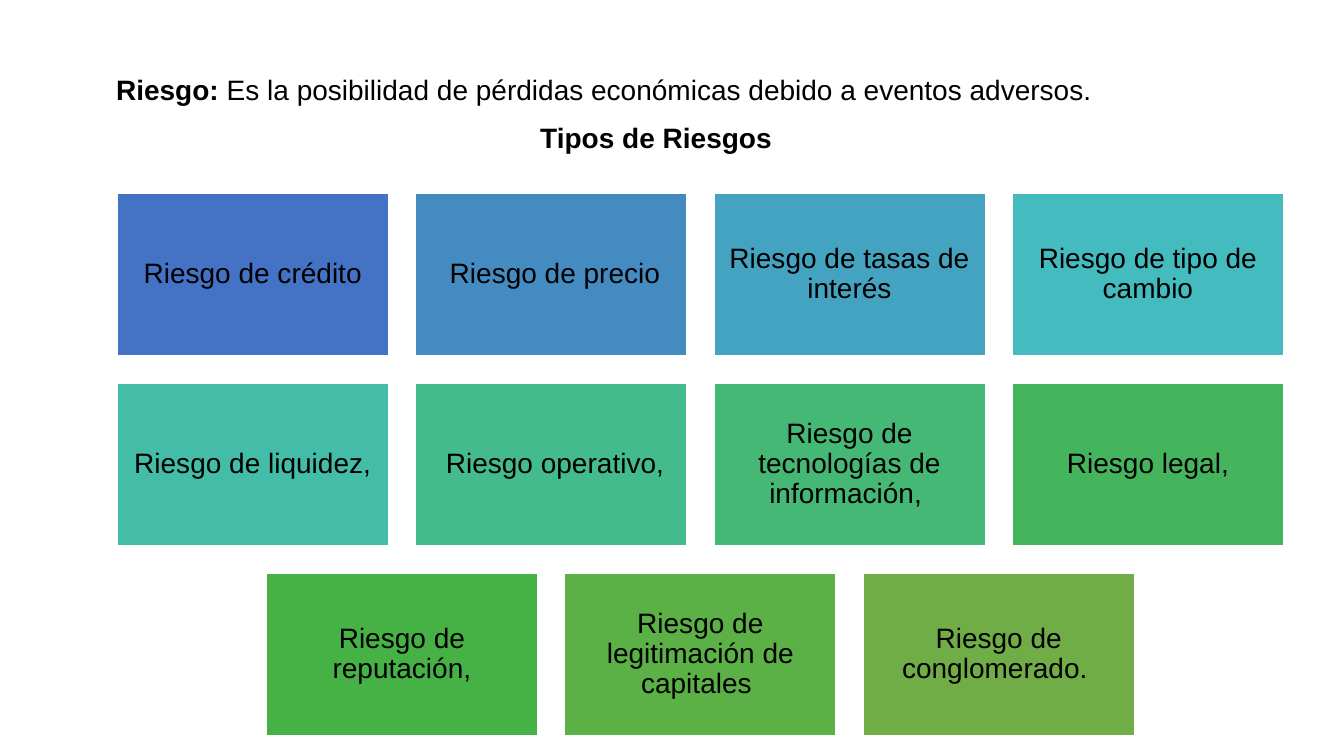
import dataclasses

import pptx
import pptx.dml.color
import pptx.enum.shapes
import pptx.enum.text
import pptx.oxml.ns
import pptx.slide
import pptx.text.text
import pptx.util
import lxml.etree

Cm = pptx.util.Cm
Pt = pptx.util.Pt
Align = pptx.enum.text.PP_ALIGN
Anchor = pptx.enum.text.MSO_ANCHOR


@dataclasses.dataclass(frozen=True)
class Theme:
    font: str = "Arial"
    size: float = 20
    text: str = "000000"
    outline: str = "FFFFFF"
    outline_width: float = 1


@dataclasses.dataclass(frozen=True)
class RiskTile:
    label: str
    fill: str


@dataclasses.dataclass(frozen=True)
class Box:
    left: float
    top: float
    width: float
    height: float


THEME = Theme()
COLUMNS = 4
FIRST_TILE = Box(2.95, 4.88, 6.84, 4.09)
COLUMN_STEP = 7.52
ROW_STEP = 4.78
TILE_INSET = 0.2

RISKS = [
    RiskTile("Riesgo de crédito", "4472C4"),
    RiskTile(" Riesgo de precio", "448BC2"),
    RiskTile("Riesgo de tasas de interés", "44A3C0"),
    RiskTile("Riesgo de tipo de cambio", "43BBBF"),
    RiskTile("Riesgo de liquidez,", "43BDA7"),
    RiskTile(" Riesgo operativo,", "43BB8D"),
    RiskTile("Riesgo de tecnologías de información, ", "44B874"),
    RiskTile("Riesgo legal,", "45B55D"),
    RiskTile("Riesgo de reputación,", "46B246"),
    RiskTile("Riesgo de legitimación de capitales ", "5BB046"),
    RiskTile("Riesgo de conglomerado. ", "70AD47"),
]


def color(value: str) -> pptx.dml.color.RGBColor:
    return pptx.dml.color.RGBColor.from_string(value)


def format_run(run: pptx.text.text._Run, bold: bool = False) -> None:
    run.font.name = THEME.font
    run.font.size = Pt(THEME.size)
    run.font.bold = bold
    run.font.color.rgb = color(THEME.text)


def place_placeholder(shape, box: Box) -> None:
    shape.left, shape.top = Cm(box.left), Cm(box.top)
    shape.width, shape.height = Cm(box.width), Cm(box.height)
    frame = shape.text_frame
    frame.word_wrap = True
    frame.auto_size = pptx.enum.text.MSO_AUTO_SIZE.NONE
    frame.vertical_anchor = Anchor.TOP


def add_title(slide: pptx.slide.Slide) -> None:
    title = slide.shapes.title
    place_placeholder(title, Box(13.36, 2.9, 7.01, 1.12))
    title.text_frame.text = "Tipos de Riesgos"
    paragraph = title.text_frame.paragraphs[0]
    paragraph.alignment = Align.LEFT
    format_run(paragraph.runs[0], bold=True)


def add_definition(slide: pptx.slide.Slide) -> None:
    body = slide.placeholders[1]
    place_placeholder(body, Box(2.67, 1.7, 27.64, 1.12))
    paragraph = body.text_frame.paragraphs[0]
    paragraph.alignment = Align.JUSTIFY
    paragraph.space_before = Pt(0)
    properties = paragraph._p.get_or_add_pPr()
    properties.set("marL", "0")
    properties.set("indent", "0")
    lxml.etree.SubElement(properties, pptx.oxml.ns.qn("a:buNone"))
    parts = [
        ("Riesgo: ", True),
        ("Es la posibilidad de pérdidas económicas debido a eventos adversos. ", False),
    ]
    for text, bold in parts:
        run = paragraph.add_run()
        run.text = text
        format_run(run, bold)


def add_tile(slide: pptx.slide.Slide, tile: RiskTile, box: Box) -> None:
    shape = slide.shapes.add_shape(
        pptx.enum.shapes.MSO_SHAPE.RECTANGLE,
        Cm(box.left), Cm(box.top), Cm(box.width), Cm(box.height),
    )
    shape.shadow.inherit = False
    shape.fill.solid()
    shape.fill.fore_color.rgb = color(tile.fill)
    shape.line.color.rgb = color(THEME.outline)
    shape.line.width = Pt(THEME.outline_width)
    frame = shape.text_frame
    frame.word_wrap = True
    frame.vertical_anchor = Anchor.MIDDLE
    frame.margin_left = frame.margin_right = Cm(TILE_INSET)
    frame.margin_top = frame.margin_bottom = Cm(TILE_INSET)
    frame.text = tile.label
    paragraph = frame.paragraphs[0]
    paragraph.alignment = Align.CENTER
    paragraph.line_spacing = 0.9
    format_run(paragraph.runs[0])


def add_risk_grid(slide: pptx.slide.Slide) -> None:
    for row, start in enumerate(range(0, len(RISKS), COLUMNS)):
        tiles = RISKS[start:start + COLUMNS]
        row_left = FIRST_TILE.left + (COLUMNS - len(tiles)) * COLUMN_STEP / 2
        for column, tile in enumerate(tiles):
            box = dataclasses.replace(
                FIRST_TILE,
                left=row_left + column * COLUMN_STEP,
                top=FIRST_TILE.top + row * ROW_STEP,
            )
            add_tile(slide, tile, box)


def main() -> None:
    presentation = pptx.Presentation()
    presentation.slide_width = Cm(33.87)
    presentation.slide_height = Cm(19.05)
    slide = presentation.slides.add_slide(presentation.slide_layouts[1])
    add_risk_grid(slide)
    add_title(slide)
    add_definition(slide)
    presentation.save("out.pptx")


if __name__ == "__main__":
    main()
